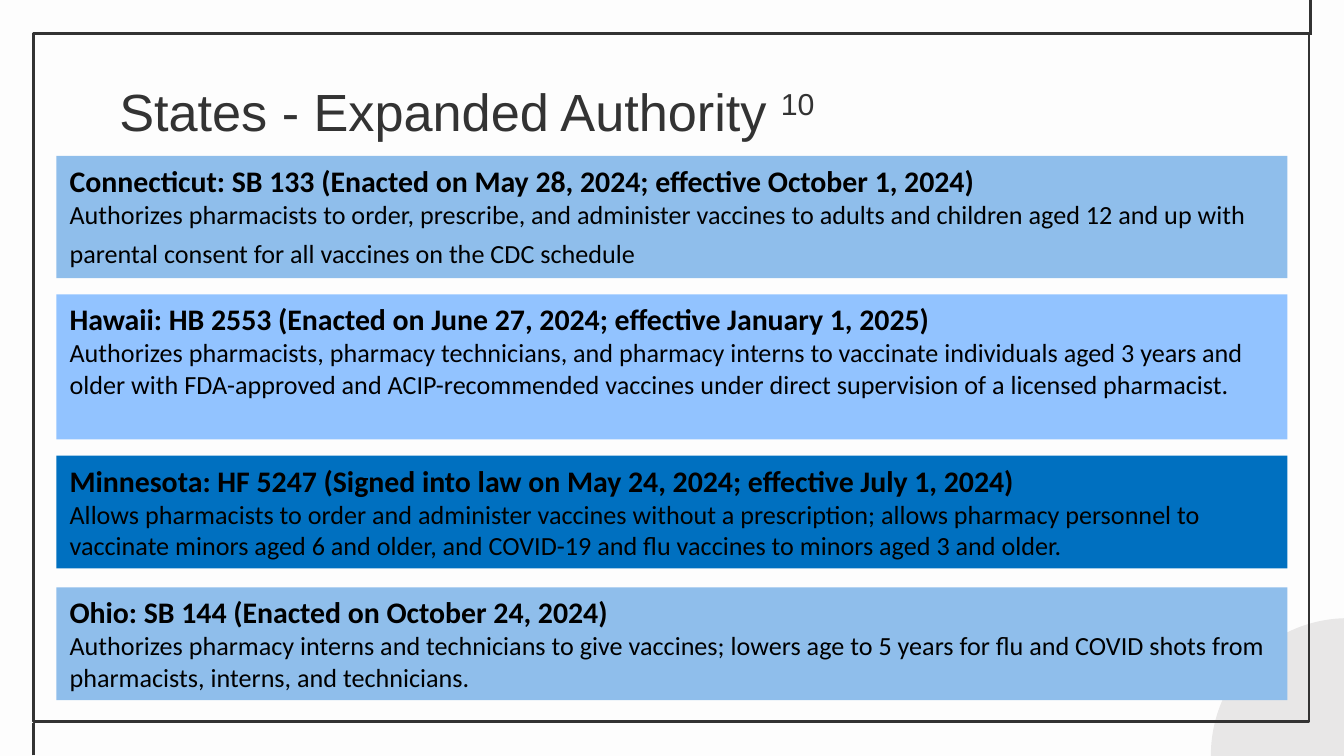
from dataclasses import dataclass

from lxml import etree
from pptx import Presentation
from pptx.dml.color import RGBColor
from pptx.enum.shapes import MSO_CONNECTOR, MSO_SHAPE
from pptx.enum.text import MSO_ANCHOR, PP_ALIGN
from pptx.oxml.ns import qn
from pptx.util import Inches, Pt

RECTANGLE = MSO_SHAPE.RECTANGLE
OVAL = MSO_SHAPE.OVAL
STRAIGHT = MSO_CONNECTOR.STRAIGHT
LEFT = PP_ALIGN.LEFT
TOP = MSO_ANCHOR.TOP


@dataclass(frozen=True)
class Theme:
    background: str = "FDFDFD"
    ink: str = "333333"
    body: str = "000000"
    corner: str = "E8E7E7"
    sky: str = "8FBEEB"
    light: str = "92C3FF"
    deep: str = "0070C0"
    title_font: str = "Arial"
    body_font: str = "Calibri"
    title_size: int = 28
    heading_size: int = 16
    detail_size: int = 14
    spacer_size: int = 18
    frame_width: float = 1.5


theme = Theme()


def add_run(paragraph, text, size, font, color, bold=False):
    run = paragraph.add_run()
    run.text = text
    run.font.size = Pt(size)
    run.font.name = font
    run.font.bold = bold
    run.font.color.rgb = RGBColor.from_string(color)
    return run


def add_panel(kind, left, top, width, height, fill=None):
    panel = slide.shapes.add_shape(
        kind, Inches(left), Inches(top), Inches(width), Inches(height))
    panel.shadow.inherit = False
    panel.line.fill.background()
    if fill:
        panel.fill.solid()
        panel.fill.fore_color.rgb = RGBColor.from_string(fill)
    else:
        panel.fill.background()
    return panel


prs = Presentation()
prs.slide_width = Inches(10)
prs.slide_height = Inches(10 * 9 / 16)
slide = prs.slides.add_slide(prs.slide_layouts[6])
slide.background.fill.solid()
slide.background.fill.fore_color.rgb = RGBColor.from_string(theme.background)

add_panel(OVAL, 9.01, 4.6, 2.04, 2.04, theme.corner)

for x, start, end in [(9.75, 0.26, 0), (0.25, 5.62, 5.38)]:
    frame_tail = slide.shapes.add_connector(
        STRAIGHT, Inches(x), Inches(start), Inches(x), Inches(end))
    frame_tail.line.color.rgb = RGBColor.from_string(theme.ink)
    frame_tail.line.width = Pt(theme.frame_width)
    etree.SubElement(frame_tail._element.spPr, qn("a:effectLst"))

frame = add_panel(RECTANGLE, 0.25, 0.25, 9.49, 5.12)
frame.line.color.rgb = RGBColor.from_string(theme.ink)
frame.line.width = Pt(theme.frame_width)

title = slide.shapes.add_textbox(
    Inches(0.79), Inches(0.49), Inches(8.43), Inches(0.63)).text_frame
title.word_wrap = True
title.vertical_anchor = TOP
title.margin_left = title.margin_right = Inches(0.1)
title.margin_top = title.margin_bottom = Inches(0.1)
title_line = title.paragraphs[0]
add_run(title_line, "States - Expanded Authority ",
        theme.title_size, theme.title_font, theme.ink)
citation = add_run(title_line, "10", theme.title_size, theme.title_font, theme.ink)
citation._r.get_or_add_rPr().set("baseline", "30000")

states = [
    (1.16, 0.91, theme.sky,
     "Connecticut: SB 133 (Enacted on May 28, 2024; effective October 1, 2024)",
     "Authorizes pharmacists to order, prescribe, and administer vaccines to adults "
     "and children aged 12 and up with parental consent for all vaccines on the CDC "
     "schedule", " "),
    (2.19, 1.08, theme.light,
     "Hawaii: HB 2553 (Enacted on June 27, 2024; effective January 1, 2025)",
     "Authorizes pharmacists, pharmacy technicians, and pharmacy interns to vaccinate "
     "individuals aged 3 years and older with FDA-approved and ACIP-recommended "
     "vaccines under direct supervision of a licensed pharmacist.", ""),
    (3.39, 0.84, theme.deep,
     "Minnesota: HF 5247 (Signed into law on May 24, 2024; effective July 1, 2024)",
     "Allows pharmacists to order and administer vaccines without a prescription; "
     "allows pharmacy personnel to vaccinate minors aged 6 and older, and COVID-19 "
     "and flu vaccines to minors aged 3 and older.", ""),
    (4.37, 0.84, theme.sky,
     "Ohio: SB 144 (Enacted on October 24, 2024)",
     "Authorizes pharmacy interns and technicians to give vaccines; lowers age to 5 "
     "years for flu and COVID shots from pharmacists, interns, and technicians.", ""),
]

for top, height, fill, law, detail, spacer in states:
    law_text = add_panel(RECTANGLE, 0.42, top, 9.16, height, fill).text_frame
    law_text.word_wrap = True
    law_text.vertical_anchor = TOP
    heading_line = law_text.paragraphs[0]
    heading_line.alignment = LEFT
    add_run(heading_line, law, theme.heading_size, theme.body_font, theme.body, True)
    detail_line = law_text.add_paragraph()
    detail_line.alignment = LEFT
    add_run(detail_line, detail, theme.detail_size, theme.body_font, theme.body)
    if spacer:
        add_run(detail_line, spacer, theme.spacer_size, theme.body_font, theme.body)

prs.save("out.pptx")
